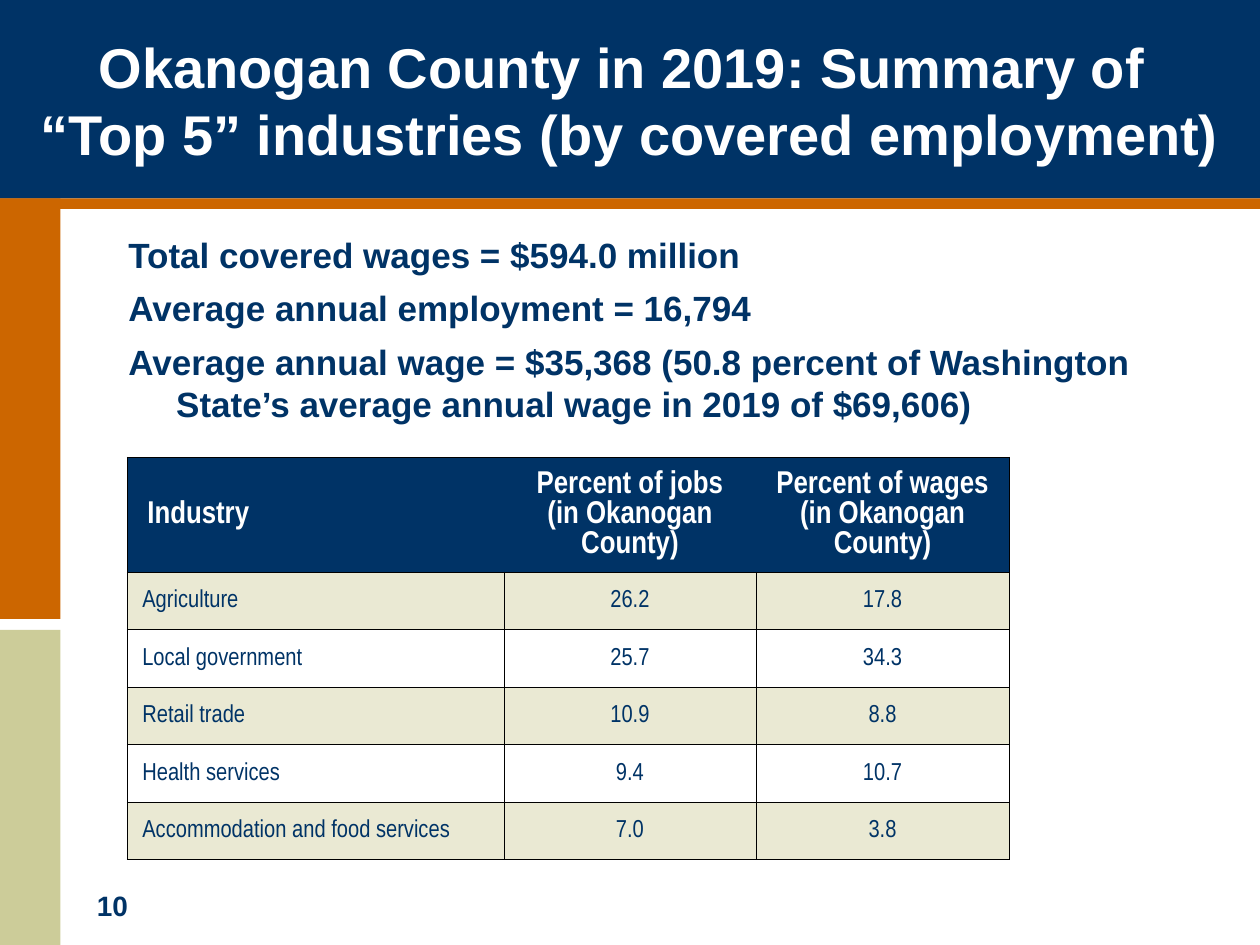
"""Build the Okanogan County top-five industries slide."""
from dataclasses import dataclass
from typing import Optional

from lxml.etree import SubElement
from pptx import Presentation
from pptx.dml.color import RGBColor
from pptx.enum.shapes import MSO_SHAPE
from pptx.enum.text import MSO_ANCHOR, PP_ALIGN
from pptx.oxml.ns import qn
from pptx.util import Inches, Pt

WIDTH, HEIGHT = 10, 7.5


@dataclass(frozen=True)
class Theme:
    navy: str = "003366"
    orange: str = "CC6600"
    khaki: str = "CCCC99"
    band: str = "EAE9D3"
    white: str = "FFFFFF"
    rule: str = "000000"
    font: str = "Arial"
    narrow: str = "Arial Narrow"
    title: int = 32
    fact: int = 20
    header: int = 18
    number: int = 16
    cell: int = 14


@dataclass(frozen=True)
class Area:
    left: float
    top: float
    width: float
    height: float

    def lengths(self) -> tuple:
        return tuple(Inches(side) for side in (self.left, self.top, self.width, self.height))


@dataclass(frozen=True)
class Band:
    area: Area
    color: str


@dataclass(frozen=True)
class Style:
    size: int
    color: str
    bold: bool = True
    font: str = "Arial"


@dataclass(frozen=True)
class Industry:
    name: str
    jobs: str
    wages: str


THEME = Theme()
RAIL = 0.048 * WIDTH
BANNER = 0.21 * HEIGHT
BANDS = (
    Band(Area(0, BANNER, RAIL, 0.445 * HEIGHT), THEME.orange),
    Band(Area(0, 0, WIDTH, BANNER), THEME.navy),
    Band(Area(0, HEIGHT * 2 / 3, RAIL, HEIGHT / 3), THEME.khaki),
    Band(Area(0, BANNER, WIDTH, 0.011 * HEIGHT), THEME.orange),
)
TITLE = ("Okanogan County in 2019: Summary of ", "“Top 5” industries (by covered employment)")
FACTS = (
    "Total covered wages = $594.0 million",
    "Average annual employment = 16,794",
    "Average annual wage = $35,368 (50.8 percent of Washington "
    "State’s average annual wage in 2019 of $69,606)",
)
SCOPE = "(in Okanogan County)"
HEADINGS = (("Industry",), ("Percent of jobs", SCOPE), ("Percent of wages", SCOPE))
INDUSTRIES = (
    Industry("Agriculture", "26.2", "17.8"),
    Industry("Local government", "25.7", "34.3"),
    Industry("Retail trade", "10.9", "8.8"),
    Industry("Health services", "9.4", "10.7"),
    Industry("Accommodation and food services", "7.0", "3.8"),
)
COLUMNS = (2.99, 2, 2.01)
HEADER_ROW, INDUSTRY_ROW = 0.71, 0.457


def add_text(paragraph, words: str, style: Style) -> None:
    run = paragraph.add_run()
    run.text = words
    run.font.name = style.font
    run.font.size = Pt(style.size)
    run.font.bold = style.bold
    run.font.color.rgb = RGBColor.from_string(style.color)


def add_paragraphs(frame, lines: tuple, style: Style, align=PP_ALIGN.LEFT) -> None:
    for index, line in enumerate(lines):
        paragraph = frame.add_paragraph() if index else frame.paragraphs[0]
        paragraph.alignment = align
        add_text(paragraph, line, style)


def draw_band(slide, band: Band) -> None:
    bar = slide.shapes.add_shape(MSO_SHAPE.RECTANGLE, *band.area.lengths())
    bar.shadow.inherit = False
    bar.fill.solid()
    bar.fill.fore_color.rgb = RGBColor.from_string(band.color)
    bar.line.fill.background()


def draw_title(slide) -> None:
    title = slide.shapes.title
    title.element.getparent().append(title.element)
    title.left, title.top, title.width, title.height = Area(0, 0, WIDTH, BANNER).lengths()
    frame = title.text_frame
    frame.word_wrap = True
    frame.vertical_anchor = MSO_ANCHOR.MIDDLE
    heading = frame.paragraphs[0]
    heading.alignment = PP_ALIGN.CENTER
    style = Style(THEME.title, THEME.white)
    add_text(heading, TITLE[0], style)
    heading.add_line_break()
    add_text(heading, TITLE[1], style)


def draw_text(slide, area: Area, lines: tuple, style: Style):
    frame = slide.shapes.add_textbox(*area.lengths()).text_frame
    frame.word_wrap = True
    add_paragraphs(frame, lines, style)
    return frame


def draw_facts(slide) -> None:
    area = Area(0.092 * WIDTH, 1.8, 0.842 * WIDTH, 1.82)
    frame = draw_text(slide, area, FACTS, Style(THEME.fact, THEME.navy))
    for index, paragraph in enumerate(frame.paragraphs):
        paragraph.space_before = Pt(6.8 if index else 0)
        properties = paragraph._p.get_or_add_pPr()
        properties.set("marL", str(Inches(0.38)))
        properties.set("indent", str(-Inches(0.38)))


def rule_cell(cell, sides: str) -> None:
    properties = cell._tc.get_or_add_tcPr()
    for index, side in enumerate("LRTB"):
        edge = SubElement(properties, qn(f"a:ln{side}"), w=str(Pt(0.5)))
        if side in sides:
            fill = SubElement(edge, qn("a:solidFill"))
            SubElement(fill, qn("a:srgbClr"), val=THEME.rule)
        else:
            SubElement(edge, qn("a:noFill"))
        properties.insert(index, edge)


def fill_cell(cell, lines: tuple, style: Style, inset: Optional[float],
              color: Optional[str], sides: str = "LRTB") -> None:
    cell.vertical_anchor = MSO_ANCHOR.MIDDLE
    cell.margin_left = Inches(inset or 0.01)
    cell.margin_top = cell.margin_right = Inches(0.01)
    cell.margin_bottom = 0
    if color:
        cell.fill.solid()
        cell.fill.fore_color.rgb = RGBColor.from_string(color)
    else:
        cell.fill.background()
    rule_cell(cell, sides)
    add_paragraphs(cell.text_frame, lines, style, PP_ALIGN.LEFT if inset else PP_ALIGN.CENTER)


def draw_industries(slide) -> None:
    area = Area(0.101 * WIDTH, 3.63, sum(COLUMNS), HEADER_ROW + INDUSTRY_ROW * len(INDUSTRIES))
    table = slide.shapes.add_table(len(INDUSTRIES) + 1, len(COLUMNS), *area.lengths()).table
    table.first_row = table.horz_banding = False
    for column, width in zip(table.columns, COLUMNS):
        column.width = Inches(width)
    for index, row in enumerate(table.rows):
        row.height = Inches(INDUSTRY_ROW if index else HEADER_ROW)
    header = Style(THEME.header, THEME.white, font=THEME.narrow)
    body = Style(THEME.cell, THEME.navy, False, THEME.narrow)
    for column, (lines, sides) in enumerate(zip(HEADINGS, ("LTB", "TB", "RTB"))):
        fill_cell(table.cell(0, column), lines, header, None if column else 0.16, THEME.navy, sides)
    for row, industry in enumerate(INDUSTRIES, 1):
        color = THEME.band if row % 2 else None
        for column, words in enumerate((industry.name, industry.jobs, industry.wages)):
            fill_cell(table.cell(row, column), (words,), body, None if column else 0.12, color)


def main() -> None:
    deck = Presentation()
    deck.slide_width, deck.slide_height = Inches(WIDTH), Inches(HEIGHT)
    slide = deck.slides.add_slide(deck.slide_layouts[5])
    for band in BANDS:
        draw_band(slide, band)
    draw_text(slide, Area(0.067 * WIDTH, 7, 0.067 * WIDTH, 0.37), ("10",),
              Style(THEME.number, THEME.navy))
    draw_title(slide)
    draw_facts(slide)
    draw_industries(slide)
    deck.save("out.pptx")


if __name__ == "__main__":
    main()
